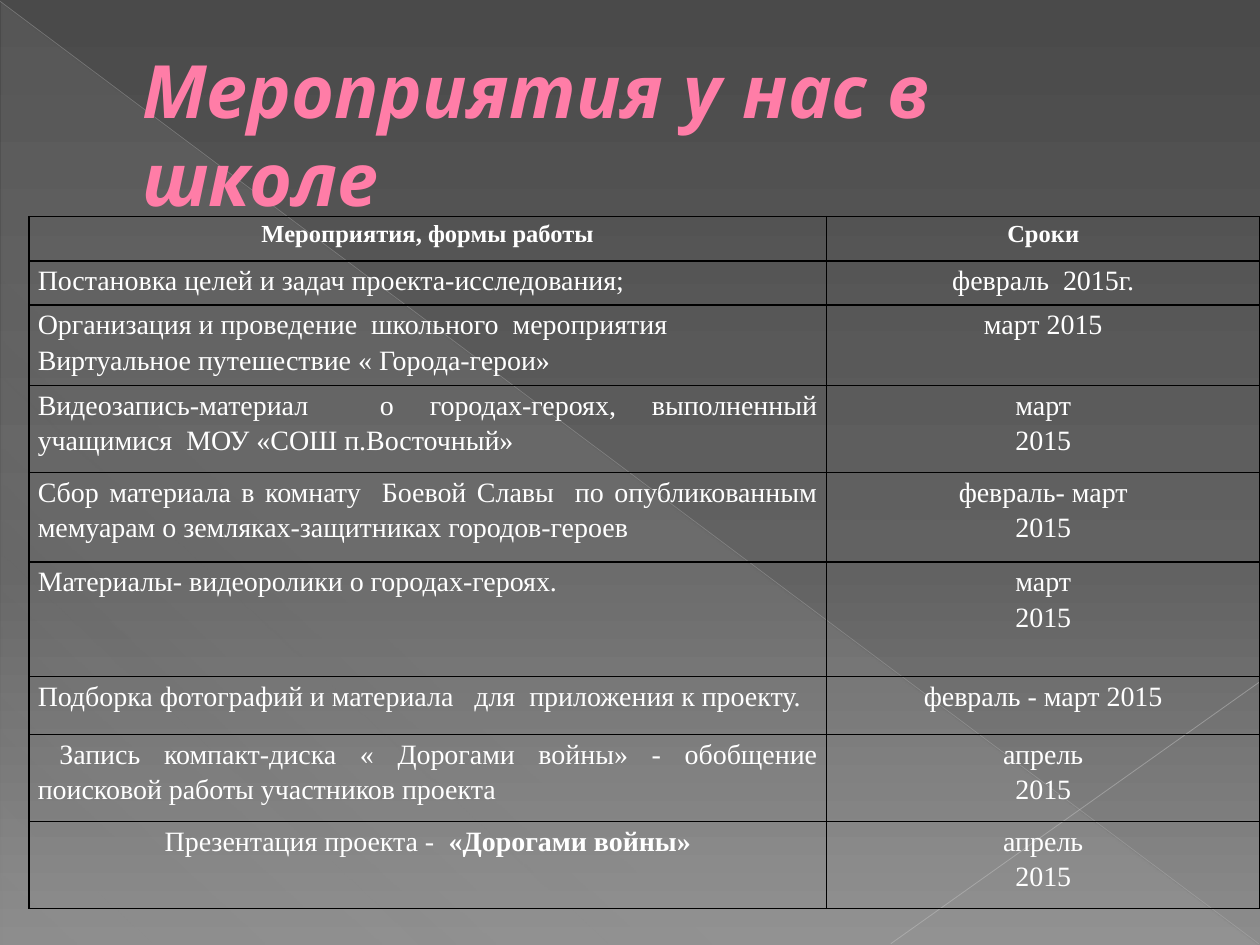
from lxml.etree import SubElement
from pptx import Presentation
from pptx.dml.color import RGBColor
from pptx.enum.shapes import MSO_CONNECTOR as Connector, MSO_SHAPE as Shape
from pptx.enum.text import MSO_ANCHOR as Anchor, PP_ALIGN as Align
from pptx.oxml import parse_xml
from pptx.oxml.ns import nsdecls, qn
from pptx.util import Inches, Pt

COLORS = {
    "title": "FF7DA7", "title_edge": "B12761", "text": "FFFFFF", "border": "000000",
    "top": "4A4A4A", "middle": "626262", "bottom": "8C8C8C",
    "facet": "D2D2D2", "diagonal": "BFBFBF", "corner": "C6C6C6",
}
BACKDROP = [(0, "top", 100), (60, "middle", 100), (100, "bottom", 100)]
FACET = [(0, "facet", 10), (70, "facet", 8), (100, "facet", 1)]
RAYS = [
    ((0, 0.01), (9.99, 7.49), "diagonal", 0.39, 35),
    ((10, 5.41), (7.07, 7.49), "corner", 0.47, 45),
]
TITLE = "Мероприятия у нас в школе"
HEADER = ("Мероприятия, формы работы", "Сроки")
PLAN = [
    (["Постановка целей и задач проекта-исследования;"], ["февраль  2015г."], 0.35),
    (["Организация и проведение  школьного  мероприятия",
      "Виртуальное путешествие « Города-герои» "], ["март 2015"], 0.64),
    (["Видеозапись-материал  о городах-героях, выполненный учащимися  "
      "МОУ «СОШ п.Восточный» "], ["март", "2015"], 0.69),
    (["Сбор материала в комнату  Боевой Славы  по опубликованным мемуарам "
      "о земляках-защитниках городов-героев "], ["февраль- март", "2015"], 0.71),
    (["Материалы- видеоролики о городах-героях."], ["март", "2015"], 0.91),
    (["Подборка фотографий и материала   для  приложения к проекту."],
     ["февраль - март 2015"], 0.46),
    ([[(" ", 11, False),
       ("Запись компакт-диска « Дорогами войны» - обобщение поисковой работы "
        "участников проекта", 16, False)]], ["апрель", "2015"], 0.69),
]
FINALE = ([("Презентация проекта -  ", 16, False), ("«Дорогами войны»", 16, True)],
          ["апрель", "2015"], 0.69)
COLUMNS = (6.33, 3.44)
HEADER_HEIGHT = 0.35


def rgb(name):
    return RGBColor.from_string(COLORS[name])


def gradient(stops, angle):
    marks = "".join(
        f'<a:gs pos="{pos * 1000}"><a:srgbClr val="{COLORS[name]}">'
        f'<a:alpha val="{alpha * 1000}"/></a:srgbClr></a:gs>'
        for pos, name, alpha in stops)
    return parse_xml(f'<a:gradFill {nsdecls("a")} rotWithShape="1"><a:gsLst>{marks}</a:gsLst>'
                     f'<a:lin ang="{angle * 60000}" scaled="0"/></a:gradFill>')


def set_gradient(fill, parent, stops, angle):
    fill.gradient()
    old = parent.find(qn("a:gradFill"))
    parent.replace(old, gradient(stops, angle))


def add_run(paragraph, text, font, size, color, bold=False, italic=False):
    run = paragraph.add_run()
    run.text = text
    run.font.name, run.font.size = font, Pt(size)
    run.font.bold, run.font.italic = bold, italic
    run.font.color.rgb = rgb(color)
    return run


def draw_backdrop(slide):
    fill = slide.background.fill
    set_gradient(fill, slide.element.find(".//" + qn("p:bgPr")), BACKDROP, 90)
    facet = slide.shapes.add_shape(Shape.RIGHT_TRIANGLE, Inches(0.01), Inches(0.02),
                                   Inches(9.98), Inches(7.48))
    facet.shadow.inherit = False
    facet.line.fill.background()
    set_gradient(facet.fill, facet.element.spPr, FACET, 133)
    for start, end, color, width, alpha in RAYS:
        ray = slide.shapes.add_connector(Connector.STRAIGHT, *map(Inches, start + end))
        ray.line.color.rgb, ray.line.width = rgb(color), Pt(width)
        tint = ray.element.spPr.find(".//" + qn("a:srgbClr"))
        SubElement(tint, qn("a:alpha"), val=str(alpha * 1000))
        SubElement(ray.element.spPr, qn("a:effectLst"))


def draw_title(slide):
    frame = slide.shapes.add_textbox(Inches(0.5), Inches(0.29), Inches(9),
                                     Inches(1.53)).text_frame
    frame.word_wrap, frame.vertical_anchor = True, Anchor.MIDDLE
    frame.margin_left = Inches(0.63)
    run = add_run(frame.paragraphs[0], TITLE, "Quicksand", 42, "title", True, True)
    edge = parse_xml(f'<a:ln {nsdecls("a")} w="6350"><a:solidFill>'
                     f'<a:srgbClr val="{COLORS["title_edge"]}"/></a:solidFill></a:ln>')
    run.font._element.insert(0, edge)


def fill_cell(cell, paragraphs, align):
    cell.margin_left = cell.margin_right = Inches(0.07)
    cell.margin_top = cell.margin_bottom = 0
    frame = cell.text_frame
    for index, runs in enumerate(paragraphs):
        paragraph = frame.add_paragraph() if index else frame.paragraphs[0]
        paragraph.alignment, paragraph.line_spacing = align, 1.15
        for text, size, bold in [(runs, 16, False)] if isinstance(runs, str) else runs:
            add_run(paragraph, text, "Times New Roman", size, "text", bold)
    properties = cell._tc.get_or_add_tcPr()
    for side in ("lnL", "lnR", "lnT", "lnB"):
        properties.append(parse_xml(
            f'<a:{side} {nsdecls("a")} w="12700"><a:solidFill>'
            f'<a:srgbClr val="{COLORS["border"]}"/></a:solidFill></a:{side}>'))
    cell.fill.background()


def draw_plan(slide):
    header = [[[(text, 14, True)]] for text in HEADER]
    rows = [(*header, HEADER_HEIGHT, Align.CENTER)]
    rows += [(*entry, Align.JUSTIFY) for entry in PLAN]
    finale, dates, height = FINALE
    rows.append(([finale], dates, height, Align.CENTER))
    table = slide.shapes.add_table(len(rows), len(COLUMNS), Inches(0.23), Inches(1.72),
                                   Inches(sum(COLUMNS)),
                                   Inches(sum(row[2] for row in rows))).table
    table.first_row = table.horz_banding = False
    for column, width in zip(table.columns, COLUMNS):
        column.width = Inches(width)
    for index, (activity, dates, height, align) in enumerate(rows):
        table.rows[index].height = Inches(height)
        fill_cell(table.cell(index, 0), activity, align)
        fill_cell(table.cell(index, 1), dates, Align.CENTER)


def main():
    deck = Presentation()
    deck.slide_width, deck.slide_height = Inches(10), Inches(7.5)
    slide = deck.slides.add_slide(deck.slide_layouts[6])
    draw_backdrop(slide)
    draw_title(slide)
    draw_plan(slide)
    deck.save("out.pptx")


if __name__ == "__main__":
    main()
